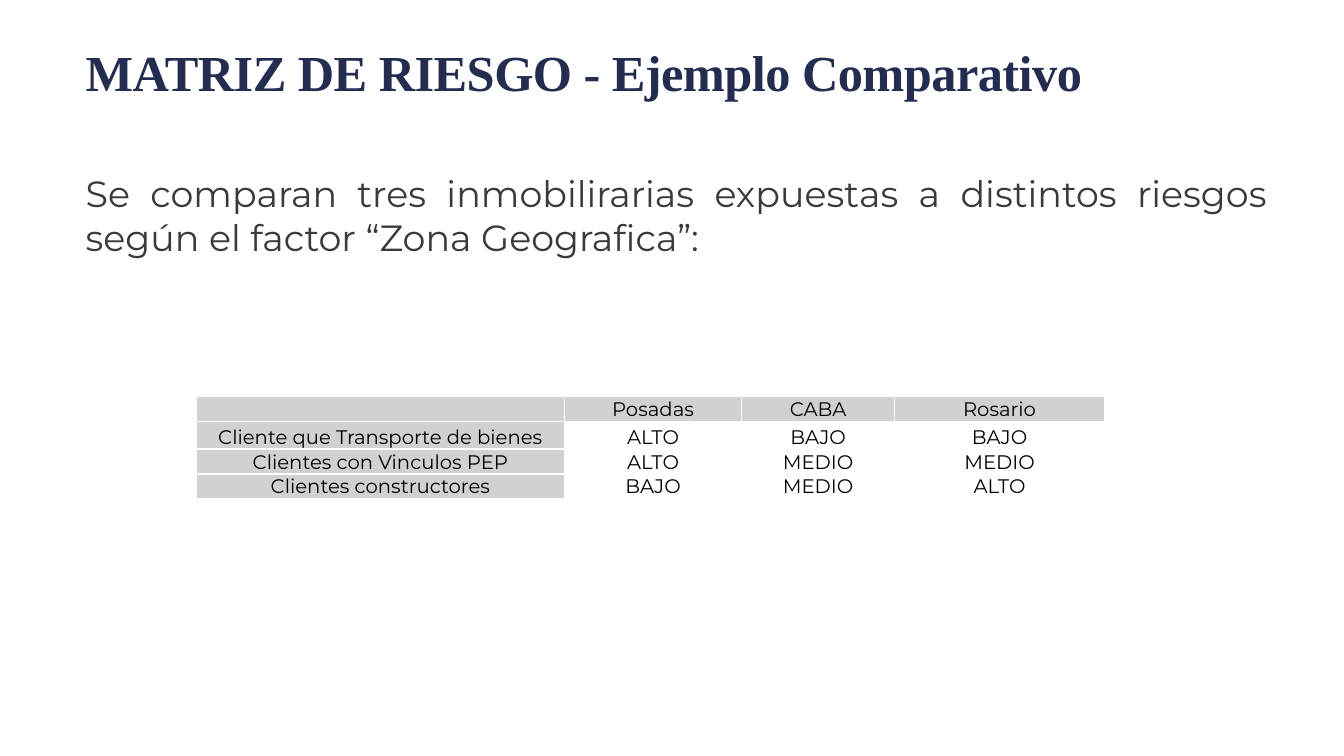
from lxml.etree import SubElement
from pptx import Presentation
from pptx.dml.color import RGBColor
from pptx.enum.text import MSO_ANCHOR, MSO_AUTO_SIZE, PP_ALIGN
from pptx.oxml.ns import qn
from pptx.util import Inches, Pt

COLORS = {"title": "242C4F", "body": "3A3A3A", "cell": "000000",
          "header": "D1D1D1", "border": "FFFFFF"}
COLUMNS, ROWS = 160, 90
UNIT = Inches(1) / 12  # side of one grid square


def grid(count):
    return round(count * UNIT)


class RiskPage:
    """Holds the style and the current slide; lengths are grid squares."""

    heading_font = "Times New Roman"
    text_font = "Montserrat"

    def __init__(self, deck):
        self.page = deck.slides.add_slide(deck.slide_layouts[1])

    def style(self, para, name, size, color, bold=False):
        para.font.name = name
        para.font.size = Pt(size)
        para.font.bold = bold
        para.font.color.rgb = RGBColor.from_string(COLORS[color])

    def fill_placeholder(self, box, area, text, anchor):
        box.left, box.top, box.width, box.height = map(grid, area)
        frame = box.text_frame
        frame.text = text
        frame.word_wrap = True
        frame.auto_size = MSO_AUTO_SIZE.NONE
        frame.vertical_anchor = anchor
        para = frame.paragraphs[0]
        para.space_before = Pt(0)
        return para

    def title(self, area, text):
        para = self.fill_placeholder(self.page.shapes.title, area, text, MSO_ANCHOR.MIDDLE)
        para.alignment = PP_ALIGN.LEFT
        para.line_spacing = 0.9
        self.style(para, self.heading_font, 36, "title", bold=True)
        para.runs[0].font._element.set("spc", "-40")

    def body(self, area, text):
        para = self.fill_placeholder(self.page.placeholders[1], area, text, MSO_ANCHOR.TOP)
        para.alignment = PP_ALIGN.JUSTIFY
        para.line_spacing = 1.0
        para.space_after = Pt(18)
        properties = para._p.get_or_add_pPr()
        properties.set("marL", "0")
        properties.set("indent", "0")
        SubElement(properties, qn("a:buNone"))
        self.style(para, self.text_font, 26, "body")

    def border(self, cell):
        properties = cell._tc.get_or_add_tcPr()
        for side in ("lnL", "lnR", "lnT", "lnB"):
            line = SubElement(properties, qn(f"a:{side}"), w=str(Pt(1)))
            paint = SubElement(line, qn("a:solidFill"))
            SubElement(paint, qn("a:srgbClr"), val=COLORS["border"])

    def cell(self, cell, text, shaded):
        cell.margin_left = cell.margin_right = cell.margin_top = Inches(0.01)
        cell.margin_bottom = 0
        cell.vertical_anchor = MSO_ANCHOR.BOTTOM
        self.border(cell)
        if shaded:
            cell.fill.solid()
            cell.fill.fore_color.rgb = RGBColor.from_string(COLORS["header"])
        else:
            cell.fill.background()
        para = cell.text_frame.paragraphs[0]
        para.alignment = PP_ALIGN.CENTER
        self.style(para, self.text_font, 14, "cell")
        if text:
            para.add_run().text = text
        else:
            SubElement(para._p, qn("a:endParaRPr"), sz="1400")

    def table(self, left, top, widths, heights, values):
        area = map(grid, (left, top, sum(widths), sum(heights)))
        table = self.page.shapes.add_table(len(heights), len(widths), *area).table
        table.first_row = table.horz_banding = False
        for column, width in zip(table.columns, widths):
            column.width = grid(width)
        for row, height in zip(table.rows, heights):
            row.height = grid(height)
        for r, line in enumerate(values):
            for c, text in enumerate(line):
                self.cell(table.cell(r, c), text, shaded=r == 0 or c == 0)


def main():
    deck = Presentation()
    deck.slide_width, deck.slide_height = grid(COLUMNS), grid(ROWS)
    risk = RiskPage(deck)

    # Introduction
    risk.body((9, 19.8, 143.2, 54.7),
              "Se comparan tres inmobilirarias expuestas a distintos riesgos "
              "según el factor “Zona Geografica”:")

    # Heading
    risk.title((9, 4.7, 149.8, 8.4), "MATRIZ DE RIESGO - Ejemplo Comparativo")

    # Risk by client type and city
    risk.table(23.4, 47.2, (43.8, 21.1, 18.2, 25), (2.9, 3.3, 2.9, 2.9), [
        ("", "Posadas", "CABA", "Rosario"),
        ("Cliente que Transporte de bienes", "ALTO", "BAJO", "BAJO"),
        ("Clientes con Vinculos PEP", "ALTO", "MEDIO", "MEDIO"),
        ("Clientes constructores", "BAJO", "MEDIO", "ALTO"),
    ])
    deck.save("out.pptx")


if __name__ == "__main__":
    main()
